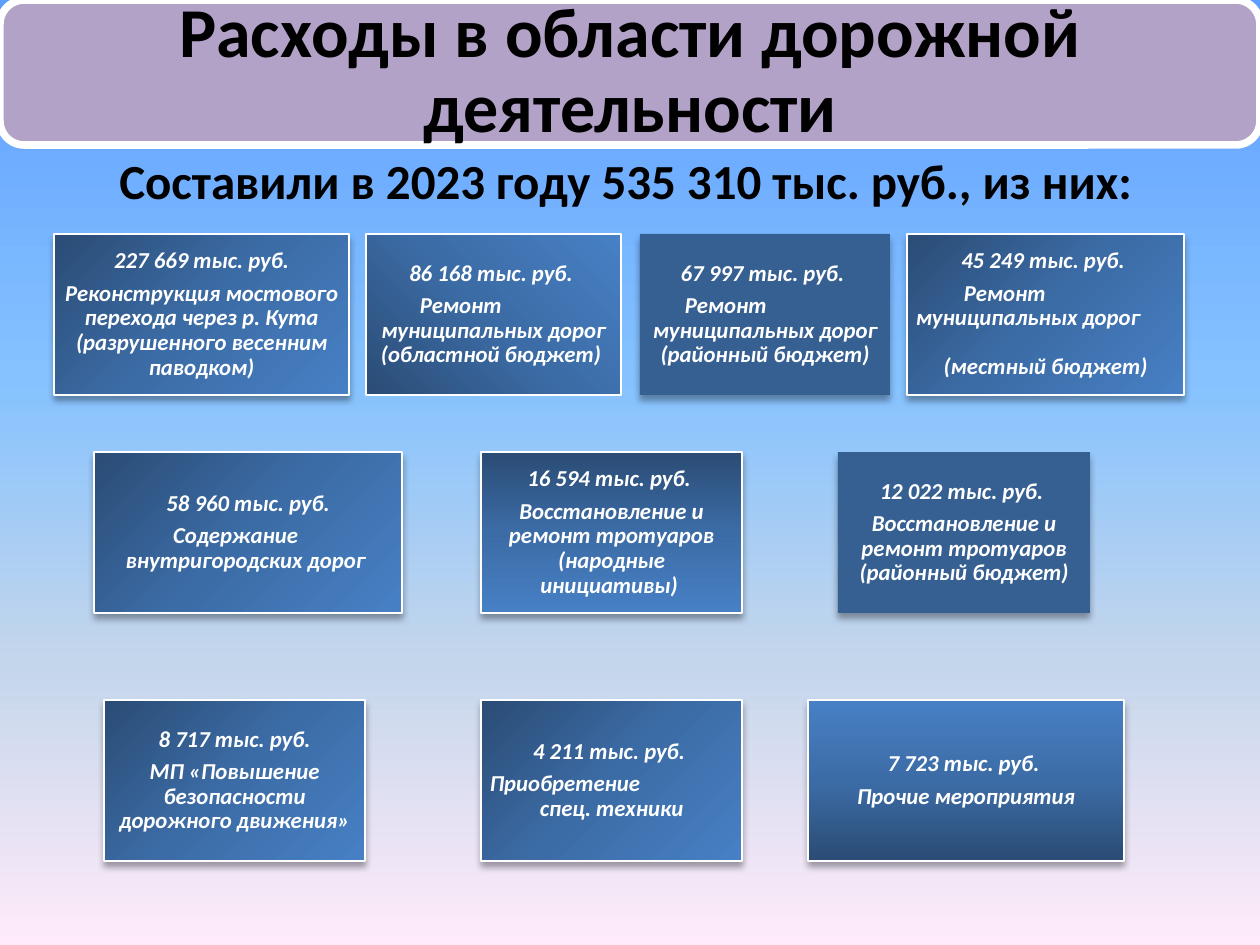
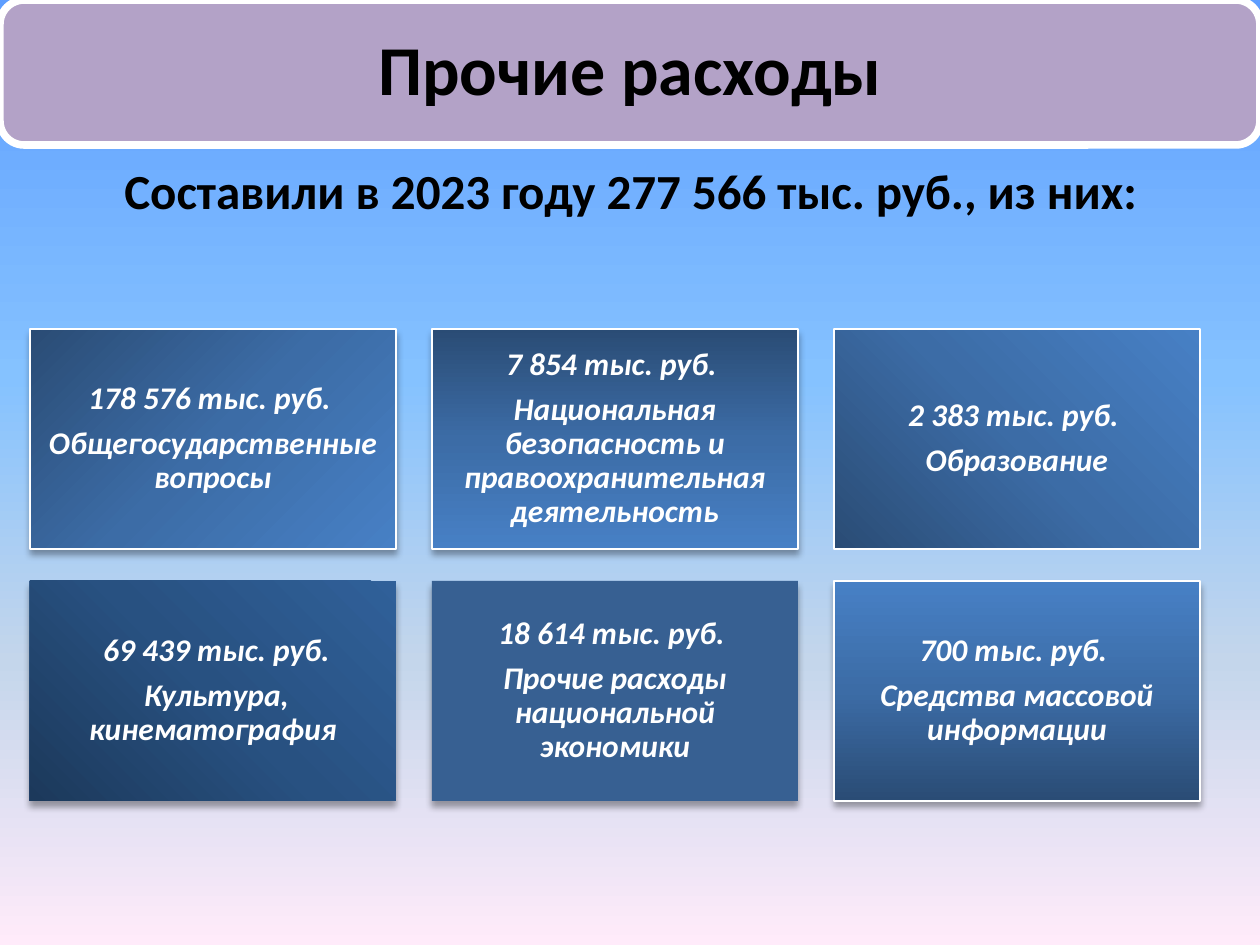
"""Build two slides on municipal spending: road works and other expenses."""
from dataclasses import dataclass
from lxml import etree
from pptx import Presentation
from pptx.dml.color import RGBColor
from pptx.enum.shapes import MSO_SHAPE
from pptx.enum.text import MSO_ANCHOR, PP_ALIGN
from pptx.oxml import parse_xml
from pptx.oxml.ns import nsdecls, qn
from pptx.util import Emu, Pt

RECT, ROUND = MSO_SHAPE.RECTANGLE, MSO_SHAPE.ROUNDED_RECTANGLE
LEFT, CENTER, MIDDLE = PP_ALIGN.LEFT, PP_ALIGN.CENTER, MSO_ANCHOR.MIDDLE
PX = 914400 // 126
SLIDE_W, SLIDE_H = 1260, 945
FLAT, RADIAL = "flat", "radial"
DIAGONAL, DOWN, UP, RISING = 45, 90, 270, 315


@dataclass(frozen=True)
class Theme:
    font: str = "Calibri"
    title_size: int = 40
    subtitle_size: int = 28
    road_size: int = 13
    other_size: int = 18
    dark: str = "000000"
    light: str = "FFFFFF"
    band: str = "B3A2C7"
    flat: str = "376092"
    sky: tuple = ((0, "5E9EFF"), (40, "85C2FF"), (70, "C4D6EB"), (100, "FFEBFA"))
    blue: tuple = ((0, "2A4C75"), (50, "3C6CA6"), (100, "4780C5"))
    navy: tuple = ((0, "1C395B"), (50, "285181"), (100, "306099"))


@dataclass(frozen=True)
class Line:
    text: str
    indent: int = None
    before: int = 0


THEME = Theme()

ROAD_ROWS = [
    (234, [
        (54, 295, DIAGONAL, "227 669 тыс. руб.",
         [Line("Реконструкция мостового перехода через р. Кута (разрушенного весенним паводком)")]),
        (366, 255, RISING, "86 168 тыс. руб. ",
         [Line("Ремонт", 48), Line("муниципальных дорог (областной бюджет) ")]),
        (640, 250, FLAT, "67 997 тыс. руб. ",
         [Line("Ремонт", 39), Line("муниципальных дорог (районный бюджет)")]),
        (907, 277, DIAGONAL, "45 249 тыс. руб. ",
         [Line("Ремонт", 51), Line("муниципальных дорог", 3), Line("(местный бюджет)", before=14)]),
    ]),
    (452, [
        (94, 308, DIAGONAL, "58 960 тыс. руб.",
         [Line("Содержание", 73), Line("внутригородских дорог ")]),
        (481, 261, DOWN, "16 594 тыс. руб. ",
         [Line("Восстановление и ремонт тротуаров (народные инициативы) ")]),
        (838, 252, FLAT, "12 022 тыс. руб. ",
         [Line("Восстановление и ремонт тротуаров (районный бюджет)")]),
    ]),
    (700, [
        (104, 261, DIAGONAL, "8 717 тыс. руб.",
         [Line("МП «Повышение безопасности дорожного движения»")]),
        (481, 261, DIAGONAL, "4 211 тыс. руб. ",
         [Line("Приобретение", 3), Line("спец. техники")]),
        (808, 316, UP, "7 723 тыс. руб. ", [Line("Прочие мероприятия")]),
    ]),
]

OTHER_CARDS = [
    (DIAGONAL, "178 576 тыс. руб. ", "Общегосударственные вопросы"),
    (DOWN, "7 854 тыс. руб. ", "Национальная безопасность и правоохранительная деятельность"),
    (RISING, "2 383 тыс. руб. ", "Образование"),
    (RADIAL, " 69 439 тыс. руб.", " Культура, кинематография"),
    (FLAT, "18 614 тыс. руб. ", "Прочие расходы национальной экономики"),
    (UP, "700 тыс. руб. ", "Средства массовой информации"),
]


def px(n):
    return Emu(n * PX)


def rgb(color):
    return RGBColor.from_string(color)


def set_gradient(fill, owner, stops, direction):
    """Replace the owner's fill by a linear or corner-centred gradient."""
    fill.gradient()
    old = owner.find(".//" + qn("a:gradFill"))
    gs = "".join(f'<a:gs pos="{pos * 1000}"><a:srgbClr val="{color}"/></a:gs>'
                 for pos, color in stops)
    if direction == RADIAL:
        course = '<a:path path="circle"><a:fillToRect t="100000" r="100000"/></a:path>'
    else:
        course = f'<a:lin ang="{direction * 60000}" scaled="0"/>'
    new = parse_xml(f'<a:gradFill {nsdecls("a")} rotWithShape="1">'
                    f'<a:gsLst>{gs}</a:gsLst>{course}</a:gradFill>')
    old.getparent().replace(old, new)


def add_shadow(sp):
    effects = sp._element.spPr.find(qn("a:effectLst"))
    shadow = etree.SubElement(effects, qn("a:outerShdw"), blurRad=str(Pt(4)),
                              dist=str(Pt(3)), dir="5400000", rotWithShape="0")
    color = etree.SubElement(shadow, qn("a:srgbClr"), val=THEME.dark)
    etree.SubElement(color, qn("a:alpha"), val="35000")


def set_frame(sp, inset_x, inset_y):
    tf = sp.text_frame
    tf.word_wrap = True
    tf.vertical_anchor = MIDDLE
    tf.margin_left = tf.margin_right = px(inset_x)
    tf.margin_top = tf.margin_bottom = px(inset_y)
    return tf


def write(p, text, size, color, italic=False, spacing=0.9):
    p.alignment = CENTER
    p.line_spacing = spacing
    r = p.add_run()
    r.text = text
    r.font.name = THEME.font
    r.font.size = Pt(size)
    r.font.bold = True
    r.font.italic = italic
    r.font.color.rgb = rgb(color)


def add_box(slide, kind, x, y, w, h, line_width):
    sp = slide.shapes.add_shape(kind, px(x), px(y), px(w), px(h))
    sp.shadow.inherit = False
    if line_width:
        sp.line.color.rgb = rgb(THEME.light)
        sp.line.width = Pt(line_width)
    else:
        sp.line.fill.background()
    return sp


def add_title(slide, text):
    sp = add_box(slide, ROUND, 0, 0, SLIDE_W, 145, 4.33)
    sp.fill.solid()
    sp.fill.fore_color.rgb = rgb(THEME.band)
    write(set_frame(sp, 21, 21).paragraphs[0], text, THEME.title_size, THEME.dark)


def add_subtitle(slide, x, y, text):
    sp = slide.shapes.add_textbox(px(x), px(y), px(1201), px(89))
    write(set_frame(sp, 13, 6).paragraphs[0], text, THEME.subtitle_size, THEME.dark, spacing=1.0)


def add_card(slide, x, y, w, h, look, amount, lines, size, inset):
    """Add a card with an amount above its purpose."""
    sp = add_box(slide, RECT, x, y, w, h, 0 if look in (FLAT, RADIAL) else 0.75)
    if look == FLAT:
        sp.fill.solid()
        sp.fill.fore_color.rgb = rgb(THEME.flat)
    else:
        stops = THEME.navy if look == RADIAL else THEME.blue
        set_gradient(sp.fill, sp._element.spPr, stops, look)
    if look != RISING:
        add_shadow(sp)
    tf = set_frame(sp, inset, inset)
    p = tf.paragraphs[0]
    write(p, amount, size, THEME.light, italic=True)
    p.space_after = Pt(round(size * 0.35, 1))
    for line in lines:
        p = tf.add_paragraph()
        write(p, line.text, size, THEME.light, italic=True)
        p.space_before = Pt(line.before)
        if line.indent is not None:
            p.alignment = LEFT
            p._p.get_or_add_pPr().set("marL", str(px(line.indent)))


def add_slide(prs, title):
    slide = prs.slides.add_slide(prs.slide_layouts[6])
    set_gradient(slide.background.fill, slide._element, THEME.sky, DOWN)
    add_title(slide, title)
    return slide


def add_road_slide(prs):
    slide = add_slide(prs, "Расходы в области дорожной деятельности")
    for y, cards in ROAD_ROWS:
        for x, w, look, amount, lines in cards:
            add_card(slide, x, y, w, 161, look, amount, lines, THEME.road_size, 6)
    add_subtitle(slide, 25, 135, "Составили в 2023 году 535 310 тыс. руб., из них:")


def add_other_slide(prs):
    slide = add_slide(prs, "Прочие расходы")
    for i, (look, amount, purpose) in enumerate(OTHER_CARDS):
        row, col = divmod(i, 3)
        add_card(slide, 30 + 402 * col, 329 + 252 * row, 366, 220,
                 look, amount, [Line(purpose)], THEME.other_size, 9)
    add_subtitle(slide, 30, 145, "Составили в 2023 году 277 566 тыс. руб., из них:")


def main():
    prs = Presentation()
    prs.slide_width, prs.slide_height = px(SLIDE_W), px(SLIDE_H)
    add_road_slide(prs)
    add_other_slide(prs)
    prs.save("out.pptx")


if __name__ == "__main__":
    main()
